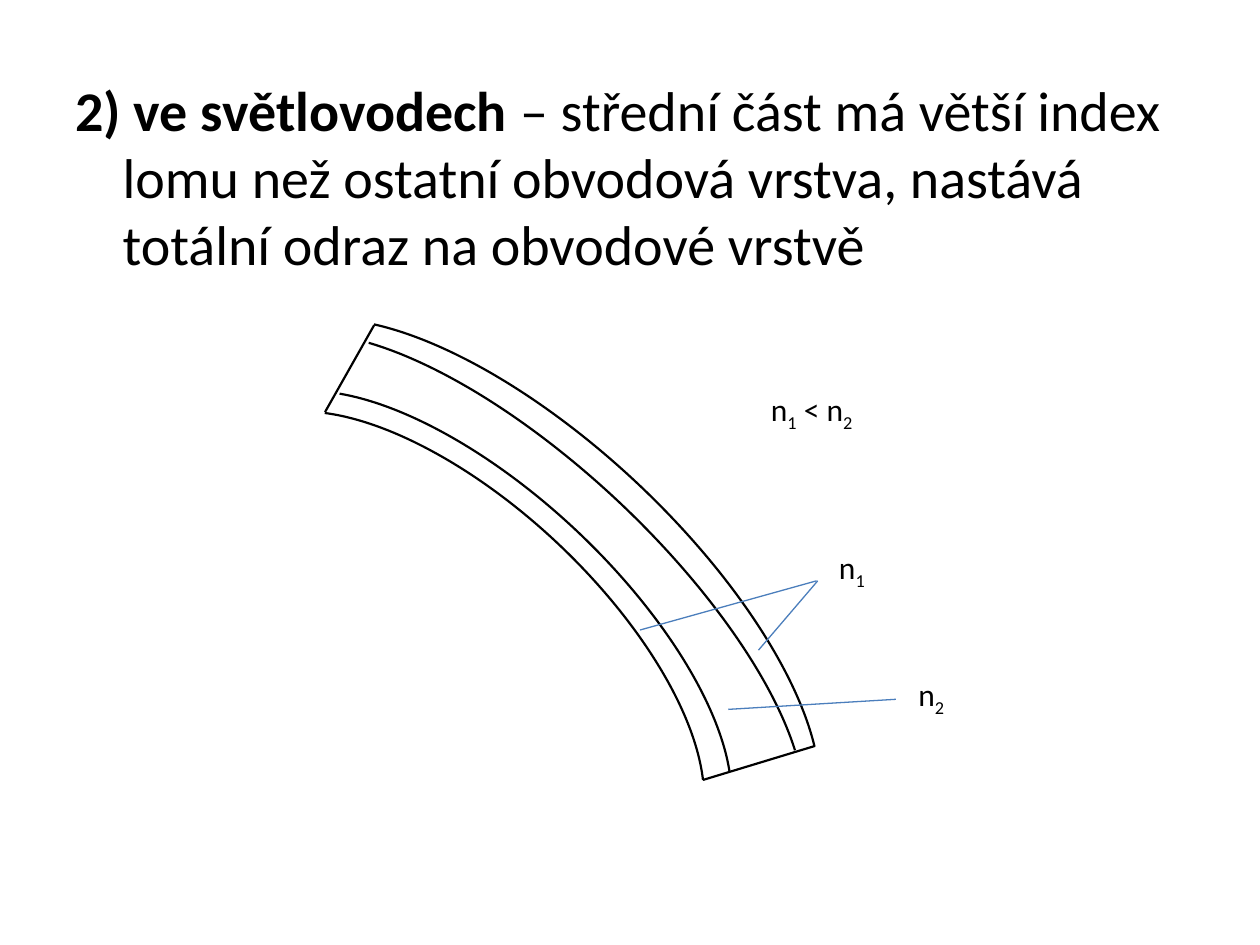
"""Build a slide on total reflection in light guides."""
from dataclasses import dataclass

from lxml import etree
from pptx import Presentation
from pptx.dml.color import RGBColor
from pptx.enum.shapes import MSO_CONNECTOR, MSO_SHAPE
from pptx.enum.text import MSO_AUTO_SIZE
from pptx.oxml.ns import qn
from pptx.shapes.shapetree import GroupShapes, SlideShapes
from pptx.util import Inches, Pt

ARC = MSO_SHAPE.ARC
STRAIGHT = MSO_CONNECTOR.STRAIGHT
GROW = MSO_AUTO_SIZE.SHAPE_TO_FIT_TEXT
COLORS = {"ink": "000000", "pointer": "4B7EBC"}
FONT = "Calibri"
COLUMNS, ROWS = 100, 75
SLIDE_WIDTH, SLIDE_HEIGHT = Inches(10), Inches(7.5)
ARC_ROTATION = 43.2
ARC_START = 117.55


@dataclass(frozen=True)
class Box:
    column: float
    row: float
    columns: float
    rows: float


@dataclass(frozen=True)
class GuideArc:
    box: Box
    end: float


@dataclass(frozen=True)
class Segment:
    start: tuple[float, float]
    end: tuple[float, float]
    color: str
    width: float


@dataclass(frozen=True)
class Phrase:
    text: str
    bold: bool = False
    subscript: bool = False


@dataclass(frozen=True)
class Label:
    box: Box
    phrases: tuple[Phrase, ...]


SUB_ONE = Phrase("1", subscript=True)
SUB_TWO = Phrase("2", subscript=True)
BODY = Label(Box(5, 5.5, 90, 61.5), (
    Phrase("2) ve světlovodech ", bold=True),
    Phrase("– střední část má větší index lomu než ostatní obvodová vrstva, "
           "nastává totální odraz na obvodové vrstvě"),
))
GUIDE_ARCS = (
    GuideArc(Box(12.5, 40.1, 48.4, 21.9), 207.87),
    GuideArc(Box(13.4, 35.1, 58, 23.8), 207.35),
    GuideArc(Box(13, 39.1, 50.4, 21.9), 207.87),
    GuideArc(Box(12.8, 36.8, 57.5, 21.9), 207.3),
)
GUIDE_ENDS = (
    Segment((29.7, 25.8), (25.8, 32.7), "ink", 1.25),
    Segment((55.8, 61.9), (64.7, 59.2), "ink", 1.25),
)
POINTERS = (
    Segment((50.8, 50), (64.8, 46.1), "pointer", 0.75),
    Segment((60.2, 51.6), (64.9, 46.1), "pointer", 0.75),
    Segment((57.8, 56.3), (71.1, 55.5), "pointer", 0.75),
)
LABELS = (
    Label(Box(65.6, 43, 5.5, 4.8), (Phrase("n"), SUB_ONE)),
    Label(Box(71.9, 53.1, 5.5, 4), (Phrase("n"), SUB_TWO)),
    Label(Box(60.2, 30.5, 16.4, 4), (Phrase("n"), SUB_ONE, Phrase(" < n"), SUB_TWO)),
)


def across(columns: float) -> int:
    return round(SLIDE_WIDTH * columns / COLUMNS)


def down(rows: float) -> int:
    return round(SLIDE_HEIGHT * rows / ROWS)


def place(box: Box) -> tuple[int, int, int, int]:
    return across(box.column), down(box.row), across(box.columns), down(box.rows)


def color(name: str) -> RGBColor:
    return RGBColor.from_string(COLORS[name])


def draw_arc(shapes: GroupShapes, arc: GuideArc) -> None:
    shape = shapes.add_shape(ARC, *place(arc.box))
    shape.shadow.inherit = False
    shape.adjustments[0] = ARC_START
    shape.adjustments[1] = arc.end
    shape.rotation = ARC_ROTATION
    shape.fill.background()
    shape.line.color.rgb = color("ink")
    shape.line.width = Pt(1.25)


def draw_segment(shapes: SlideShapes | GroupShapes, segment: Segment) -> None:
    (start_column, start_row), (end_column, end_row) = segment.start, segment.end
    connector = shapes.add_connector(STRAIGHT, across(start_column), down(start_row),
                                     across(end_column), down(end_row))
    connector.line.color.rgb = color(segment.color)
    connector.line.width = Pt(segment.width)
    etree.SubElement(connector._element.spPr, qn("a:effectLst"))


def draw_text(shapes: SlideShapes, label: Label, size: float, hanging: float = 0) -> None:
    text_frame = shapes.add_textbox(*place(label.box)).text_frame
    text_frame.word_wrap = True
    paragraph = text_frame.paragraphs[0]
    if hanging:
        properties = paragraph._p.get_or_add_pPr()
        properties.set("marL", str(across(hanging)))
        properties.set("indent", str(-across(hanging)))
    else:
        text_frame.auto_size = GROW
    for phrase in label.phrases:
        run = paragraph.add_run()
        run.text = phrase.text
        run.font.name = FONT
        run.font.size = Pt(size)
        run.font.bold = phrase.bold
        run.font.color.rgb = color("ink")
        if phrase.subscript:
            run._r.get_or_add_rPr().set("baseline", "-25000")


def main() -> None:
    presentation = Presentation()
    presentation.slide_width, presentation.slide_height = SLIDE_WIDTH, SLIDE_HEIGHT
    slide = presentation.slides.add_slide(presentation.slide_layouts[6])
    draw_text(slide.shapes, BODY, 32, hanging=3.75)
    light_guide = slide.shapes.add_group_shape()
    for arc in GUIDE_ARCS:
        draw_arc(light_guide.shapes, arc)
    for segment in GUIDE_ENDS:
        draw_segment(light_guide.shapes, segment)
    for pointer in POINTERS:
        draw_segment(slide.shapes, pointer)
    for label in LABELS:
        draw_text(slide.shapes, label, 18)
    presentation.save("out.pptx")


if __name__ == "__main__":
    main()
